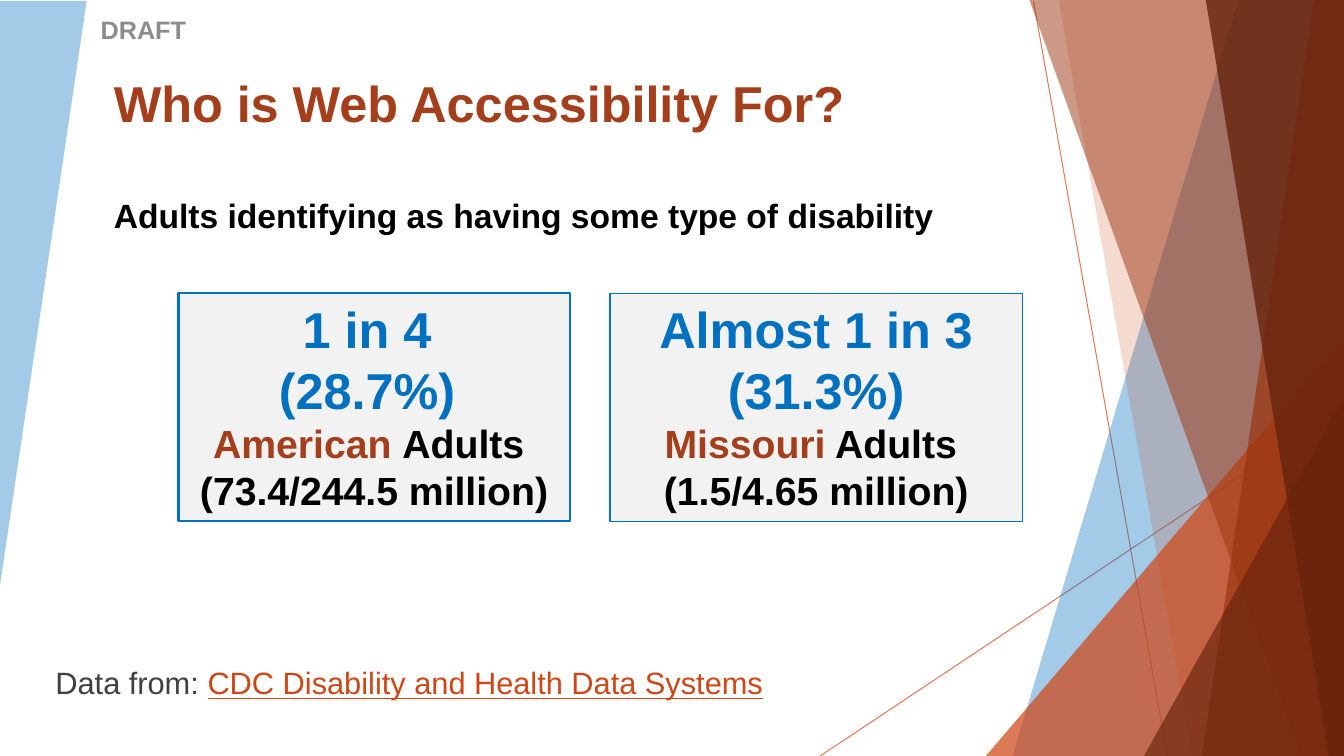
from dataclasses import dataclass
from typing import Union
from lxml.etree import SubElement
from pptx import Presentation
from pptx.dml.color import RGBColor
from pptx.enum.shapes import MSO_CONNECTOR, MSO_SHAPE
from pptx.enum.text import MSO_ANCHOR, PP_ALIGN
from pptx.oxml.ns import qn
from pptx.util import Inches, Pt

WIDE, TALL, FOOT = 13.33, 7.5, 7.51
HUES = {
    "orange": "CF4717", "rust": "9B3511", "brown": "67240C", "blue": "0070C0",
    "sky": "A3CBE8", "title": "A43E1B", "draft": "8C8C8C", "gray": "404040",
    "pale": "F2F2F2", "black": "000000",
}


@dataclass
class Ray:
    start: tuple[float, float]
    end: tuple[float, float]


@dataclass
class Band:
    top: float
    base: float
    hue: str
    alpha: int


@dataclass
class Peak:
    left: float
    top: float
    width: float
    height: float
    hue: str
    alpha: int = 100
    turn: int = 0


@dataclass
class Piece:
    text: str
    hue: str
    size: int
    line: bool = False


@dataclass
class Label:
    left: float
    top: float
    width: float
    height: float
    words: list[Piece]
    bold: bool = True
    middle: bool = False
    indent: float = 0


@dataclass
class Card:
    left: float
    width: float
    border: float
    words: list[Piece]


RAYS = [Ray((10.25, 0.01), (11.58, FOOT)), Ray((WIDE, 4.04), (8.12, FOOT))]
FACETS = [
    Band(12.28, 10.04, "blue", 36),
    Band(10.5, 11.83, "orange", 20),
    Peak(9.77, 3.34, 3.56, 4.17, "orange", 72),
    Band(10.21, 12.91, "rust", 50),
    Band(13.03, 11.92, "rust", 70),
    Band(11.96, 13.18, "brown", 80),
    Peak(11.34, 3.94, 1.99, 3.57, "brown", 66),
    Peak(-0.06, 0.01, 0.92, 6.2, "sky", turn=180),
]
LABELS = [
    Label(0.9, 0.09, 5.98, 0.4, [Piece("DRAFT", "draft", 18)], middle=True),
    Label(1.03, 0.67, 8.88, 0.99, [Piece("Who is Web Accessibility For?", "title", 36)]),
    Label(1.03, 1.88, 8.88, 0.5,
          [Piece("Adults identifying as having some type of disability", "black", 24)]),
    Label(0.41, 6.54, 11.92, 0.6,
          [Piece("Data from: ", "gray", 22),
           Piece("CDC Disability and Health Data Systems", "orange", 22, True)],
          bold=False, indent=0.04),
]
CARDS = [
    Card(1.77, 3.88, 1.5, [
        Piece("1 in 4 \n(28.7%) \n", "blue", 36),
        Piece("American ", "title", 28),
        Piece("Adults \n(73.4/244.5 million)", "black", 28)]),
    Card(6.05, 4.09, 0.75, [
        Piece("Almost 1 in 3 (31.3%)\n", "blue", 36),
        Piece("Missouri", "title", 28),
        Piece(" Adults \n(1.5/4.65 million)", "black", 28)]),
]


def tone(name: str) -> RGBColor:
    return RGBColor.from_string(HUES[name])


def fade(root, alpha: int) -> None:
    color = root.find(".//" + qn("a:srgbClr"))
    SubElement(color, qn("a:alpha")).set("val", str(alpha * 1000))


def paint(shape, hue: str, alpha: int = 100) -> None:
    shape.shadow.inherit = False
    shape.fill.solid()
    shape.fill.fore_color.rgb = tone(hue)
    if alpha < 100:
        fade(shape._element.spPr, alpha)


def draw_ray(slide, ray: Ray) -> None:
    ends = [Inches(n) for n in ray.start + ray.end]
    line = slide.shapes.add_connector(MSO_CONNECTOR.STRAIGHT, *ends)
    line.line.width = Pt(0.75)
    line.line.color.rgb = tone("orange")
    fade(line._element.spPr, 70)
    SubElement(line._element.spPr, qn("a:effectLst"))


def draw_facet(slide, facet: Union[Band, Peak]) -> None:
    if isinstance(facet, Band):
        pen = slide.shapes.build_freeform(Inches(facet.top), 0)
        spots = [(WIDE, 0), (WIDE, FOOT), (facet.base, FOOT)]
        pen.add_line_segments([(Inches(x), Inches(y)) for x, y in spots])
        shape = pen.convert_to_shape()
    else:
        box = [Inches(n) for n in (facet.left, facet.top, facet.width, facet.height)]
        shape = slide.shapes.add_shape(MSO_SHAPE.ISOSCELES_TRIANGLE, *box)
        shape.adjustments[0] = 1
        shape.rotation = facet.turn
    paint(shape, facet.hue, facet.alpha)
    shape.line.fill.background()


def write(frame, words: list[Piece], bold: bool = True):
    frame.word_wrap = True
    para = frame.paragraphs[0]
    para.font.name = "Arial"
    para.font.bold = bold
    for piece in words:
        for i, text in enumerate(piece.text.split("\n")):
            if i:
                para.add_line_break()
            if text:
                run = para.add_run()
                run.text = text
                run.font.size = Pt(piece.size)
                run.font.color.rgb = tone(piece.hue)
                if piece.line:
                    run.font.underline = True
    return para


def draw_label(slide, label: Label) -> None:
    box = [Inches(n) for n in (label.left, label.top, label.width, label.height)]
    frame = slide.shapes.add_textbox(*box).text_frame
    frame.margin_left = Inches(0.1 + label.indent)
    frame.vertical_anchor = MSO_ANCHOR.MIDDLE if label.middle else MSO_ANCHOR.TOP
    write(frame, label.words, label.bold)


def draw_card(slide, card: Card) -> None:
    box = [Inches(n) for n in (card.left, 2.91, card.width, 2.26)]
    shape = slide.shapes.add_shape(MSO_SHAPE.RECTANGLE, *box)
    paint(shape, "pale")
    shape.line.color.rgb = tone("blue")
    shape.line.width = Pt(card.border)
    shape.text_frame.vertical_anchor = MSO_ANCHOR.TOP
    write(shape.text_frame, card.words).alignment = PP_ALIGN.CENTER


def main() -> None:
    """Build the web accessibility slide and save it."""
    deck = Presentation()
    deck.slide_width, deck.slide_height = Inches(WIDE), Inches(TALL)
    slide = deck.slides.add_slide(deck.slide_layouts[6])
    for ray in RAYS:
        draw_ray(slide, ray)
    for facet in FACETS:
        draw_facet(slide, facet)
    for label in LABELS:
        draw_label(slide, label)
    for card in CARDS:
        draw_card(slide, card)
    deck.save("out.pptx")


if __name__ == "__main__":
    main()
